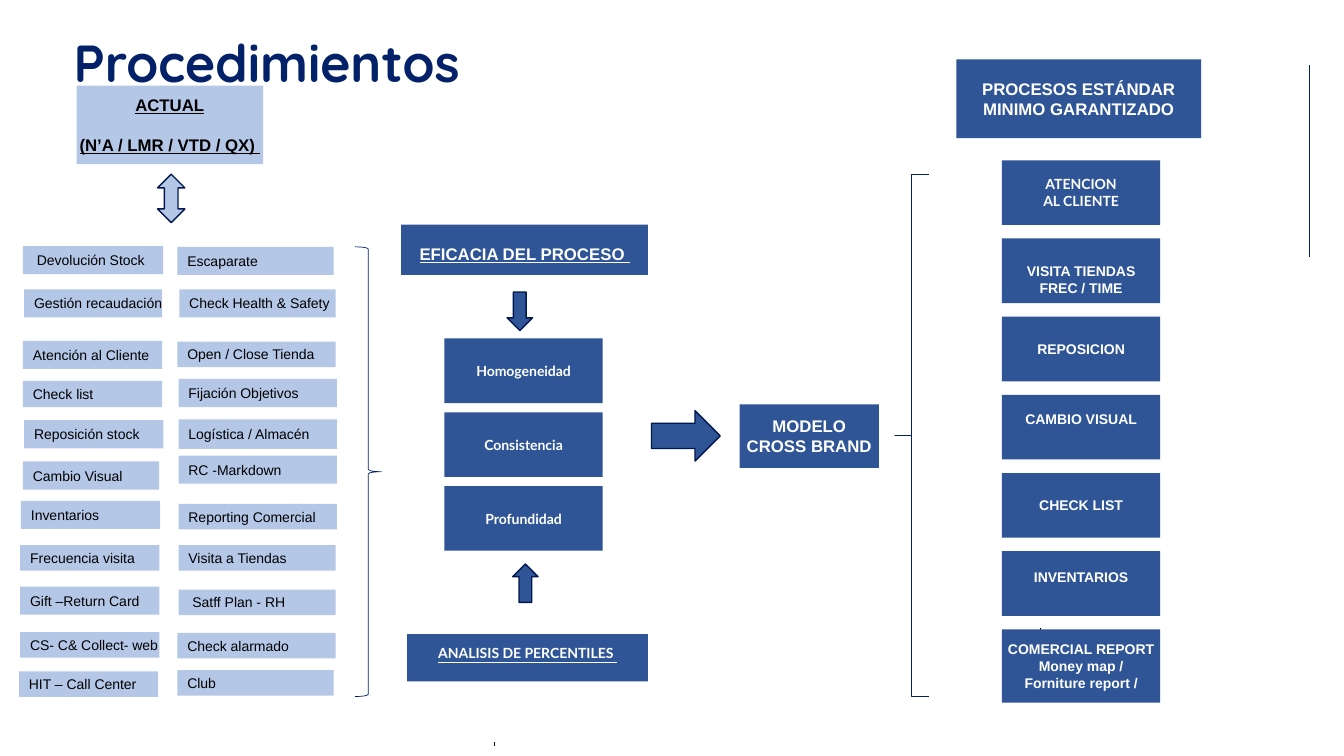
from dataclasses import dataclass

from lxml.etree import SubElement
from pptx import Presentation
from pptx.dml.color import RGBColor
from pptx.enum.shapes import MSO_CONNECTOR, MSO_SHAPE
from pptx.enum.text import MSO_ANCHOR, MSO_AUTO_SIZE, PP_ALIGN
from pptx.oxml.ns import qn
from pptx.shapes.autoshape import Shape
from pptx.slide import Slide
from pptx.util import Cm, Pt


@dataclass(frozen=True)
class Theme:
    navy: str = "022169"
    outline: str = "01184E"
    blue: str = "2F5597"
    pale: str = "B4C7E7"
    black: str = "000000"
    white: str = "FFFFFF"
    title_font: str = "Quicksand"
    body_font: str = "Arial"
    accent_font: str = "Lato"
    title: float = 37.2
    heading: float = 12
    body: float = 10


THEME = Theme()


@dataclass(frozen=True)
class Box:
    text: str
    x: float
    y: float
    w: float
    h: float
    fill: str = THEME.blue
    color: str = THEME.white
    font: str = THEME.body_font
    size: float = THEME.body
    bold: bool = True
    underline: bool = False
    align: PP_ALIGN = PP_ALIGN.CENTER
    left: float = 0.25
    top: float = 0.13
    bottom: float = 0.13
    gap: float = 0


@dataclass(frozen=True)
class Symbol:
    kind: MSO_SHAPE
    x: float
    y: float
    w: float
    h: float
    fill: str | None = None
    line: str = THEME.outline
    weight: float = 1
    rotation: float = 0
    adjustments: tuple[float, ...] = ()


@dataclass(frozen=True)
class Rule:
    x: float
    y1: float
    y2: float
    color: str = THEME.black
    weight: float = 0.75


def task(text: str, x: float, y: float, w: float, h: float, left: float = 0.25) -> Box:
    return Box(text, x, y, w, h, THEME.pale, THEME.black, bold=False, align=PP_ALIGN.LEFT, left=left)


TASKS = [
    task("Devolución Stock", 0.58, 6.2, 3.53, 0.71, 0.35),
    task("Gestión recaudación", 0.61, 7.29, 3.48, 0.71),
    task("Atención al Cliente", 0.58, 8.59, 3.51, 0.71),
    task("Check list", 0.58, 9.6, 3.51, 0.66),
    task("Reposición stock", 0.61, 10.59, 3.51, 0.71),
    task("Cambio Visual", 0.58, 11.63, 3.43, 0.71),
    task("Inventarios", 0.53, 12.62, 3.51, 0.71),
    task("Frecuencia visita", 0.51, 13.74, 3.51, 0.64),
    task("Gift –Return Card", 0.51, 14.78, 3.51, 0.71),
    task("CS- C& Collect- web", 0.51, 15.93, 3.51, 0.64),
    task("HIT – Call Center", 0.48, 16.92, 3.51, 0.64),
    task("Escaparate", 4.47, 6.22, 3.94, 0.71),
    task("Check Health & Safety", 4.52, 7.29, 3.94, 0.71),
    task("Open / Close Tienda", 4.47, 8.61, 3.99, 0.64),
    task("Fijación Objetivos", 4.5, 9.55, 3.99, 0.71),
    task("Logística / Almacén", 4.5, 10.57, 3.99, 0.74),
    task("RC -Markdown", 4.5, 11.48, 3.99, 0.71),
    task("Reporting Comercial", 4.5, 12.7, 3.99, 0.64),
    task("Visita a Tiendas", 4.5, 13.74, 3.96, 0.64),
    task("Satff Plan - RH", 4.5, 14.86, 3.96, 0.64, 0.35),
    task("Check alarmado", 4.47, 15.95, 3.99, 0.64),
    task("Club", 4.47, 16.89, 3.94, 0.64),
]

HEADINGS = [
    Box("ACTUAL\n(N’A / LMR / VTD / QX) ", 1.93, 2.16, 4.7, 1.98, THEME.pale, THEME.black,
        size=THEME.heading, underline=True, gap=13.8),
    Box("EFICACIA DEL PROCESO ", 10.11, 5.66, 6.22, 1.27, size=THEME.heading, underline=True, top=0.33),
    Box("ANALISIS DE PERCENTILES ", 10.26, 15.98, 6.07, 1.19, font=THEME.accent_font,
        underline=True, bottom=0.38),
    Box("MODELO\nCROSS BRAND", 18.64, 10.19, 3.51, 1.6, size=THEME.heading),
    Box("PROCESOS ESTÁNDAR\nMINIMO GARANTIZADO", 24.1, 1.5, 6.17, 1.98, size=THEME.heading),
]

QUALITIES = [
    Box(text, 11.2, 8.53 + 1.86 * i, 3.99, 1.63, font=THEME.accent_font)
    for i, text in enumerate(["Homogeneidad", "Consistencia", "Profundidad"])
]

STANDARDS = [
    Box(text, 25.25, 4.04 + 1.97 * i, 3.99, h, font=font, top=top, bottom=bottom)
    for i, (text, font, h, top, bottom) in enumerate([
        ("ATENCION\nAL CLIENTE", THEME.accent_font, 1.63, 0.13, 0.13),
        ("VISITA TIENDAS\nFREC / TIME", THEME.body_font, 1.63, 0.56, 0.13),
        ("REPOSICION", THEME.body_font, 1.63, 0.13, 0.13),
        ("CAMBIO VISUAL", THEME.body_font, 1.63, 0.13, 0.56),
        ("CHECK LIST", THEME.body_font, 1.63, 0.13, 0.13),
        ("INVENTARIOS", THEME.body_font, 1.63, 0.13, 0.45),
        ("COMERCIAL REPORT\nMoney map /\nForniture report /", THEME.body_font, 1.85, 0.13, 0.13),
    ])
]

SYMBOLS = [
    Symbol(MSO_SHAPE.UP_DOWN_ARROW, 3.97, 4.39, 0.69, 1.22, THEME.pale),
    Symbol(MSO_SHAPE.DOWN_ARROW, 12.78, 7.36, 0.64, 0.97, THEME.blue),
    Symbol(MSO_SHAPE.DOWN_ARROW, 12.92, 14.21, 0.64, 0.97, THEME.blue, rotation=180),
    Symbol(MSO_SHAPE.RIGHT_ARROW, 16.42, 10.35, 1.73, 1.27, THEME.blue),
    Symbol(MSO_SHAPE.LEFT_BRACE, 8.95, 6.22, 0.66, 11.33, line=THEME.navy, weight=0.5, rotation=180),
    Symbol(MSO_SHAPE.LEFT_BRACE, 22.55, 4.4, 0.86, 13.16, line=THEME.navy, weight=0.5,
           adjustments=(0, 0.5)),
]

RULES = [
    Rule(32.99, 1.65, 6.48, THEME.navy, 0.5),
    Rule(26.21, 15.82, 15.9),
    Rule(12.45, 18.69, 18.8),
]


def set_all(target: object, values: dict[str, object]) -> None:
    for name, value in values.items():
        setattr(target, name, value)


def add_shape(s: Slide, kind: MSO_SHAPE, x: float, y: float, w: float, h: float, fill: str | None) -> Shape:
    sp = s.shapes.add_shape(kind, Cm(x), Cm(y), Cm(w), Cm(h))
    sp.shadow.inherit = False
    if fill is None:
        sp.fill.background()
    else:
        sp.fill.solid()
        sp.fill.fore_color.rgb = RGBColor.from_string(fill)
    return sp


def draw_box(s: Slide, box: Box) -> None:
    sp = add_shape(s, MSO_SHAPE.RECTANGLE, box.x, box.y, box.w, box.h, box.fill)
    sp.line.fill.background()
    tf = sp.text_frame
    set_all(tf, {"word_wrap": False, "vertical_anchor": MSO_ANCHOR.MIDDLE, "margin_left": Cm(box.left),
                 "margin_top": Cm(box.top), "margin_bottom": Cm(box.bottom)})
    tf.text = box.text
    for i, p in enumerate(tf.paragraphs):
        p.alignment = box.align
        if i and box.gap:
            p.space_before = Pt(box.gap)
        for r in p.runs:
            set_all(r.font, {"name": box.font, "size": Pt(box.size), "bold": box.bold,
                             "underline": box.underline})
            r.font.color.rgb = RGBColor.from_string(box.color)


def draw_symbol(s: Slide, symbol: Symbol) -> None:
    sp = add_shape(s, symbol.kind, symbol.x, symbol.y, symbol.w, symbol.h, symbol.fill)
    sp.rotation = symbol.rotation
    sp.line.color.rgb = RGBColor.from_string(symbol.line)
    sp.line.width = Pt(symbol.weight)
    for i, value in enumerate(symbol.adjustments):
        sp.adjustments[i] = value


def draw_rule(s: Slide, rule: Rule) -> None:
    cxn = s.shapes.add_connector(MSO_CONNECTOR.STRAIGHT, Cm(rule.x), Cm(rule.y1), Cm(rule.x), Cm(rule.y2))
    cxn.line.color.rgb = RGBColor.from_string(rule.color)
    cxn.line.width = Pt(rule.weight)
    SubElement(cxn._element.spPr, qn("a:effectLst"))


def draw_title(s: Slide, text: str) -> None:
    sp = s.shapes.title
    set_all(sp, {"left": Cm(1.6), "top": Cm(-0.15), "width": Cm(14.99), "height": Cm(2.46)})
    tf = sp.text_frame
    set_all(tf, {"text": text, "word_wrap": True, "auto_size": MSO_AUTO_SIZE.NONE,
                 "vertical_anchor": MSO_ANCHOR.TOP})
    p = tf.paragraphs[0]
    set_all(p, {"alignment": PP_ALIGN.LEFT, "line_spacing": 1.5, "space_before": Pt(0)})
    r = p.runs[0]
    set_all(r.font, {"name": THEME.title_font, "size": Pt(THEME.title), "bold": True})
    r.font.color.rgb = RGBColor.from_string(THEME.navy)


def main() -> None:
    prs = Presentation()
    set_all(prs, {"slide_width": Cm(33.87), "slide_height": Cm(19.05)})
    s = prs.slides.add_slide(prs.slide_layouts[5])
    draw_title(s, "Procedimientos")
    for rule in RULES:
        draw_rule(s, rule)
    for box in TASKS + HEADINGS + QUALITIES + STANDARDS:
        draw_box(s, box)
    for symbol in SYMBOLS:
        draw_symbol(s, symbol)
    prs.save("out.pptx")


if __name__ == "__main__":
    main()
